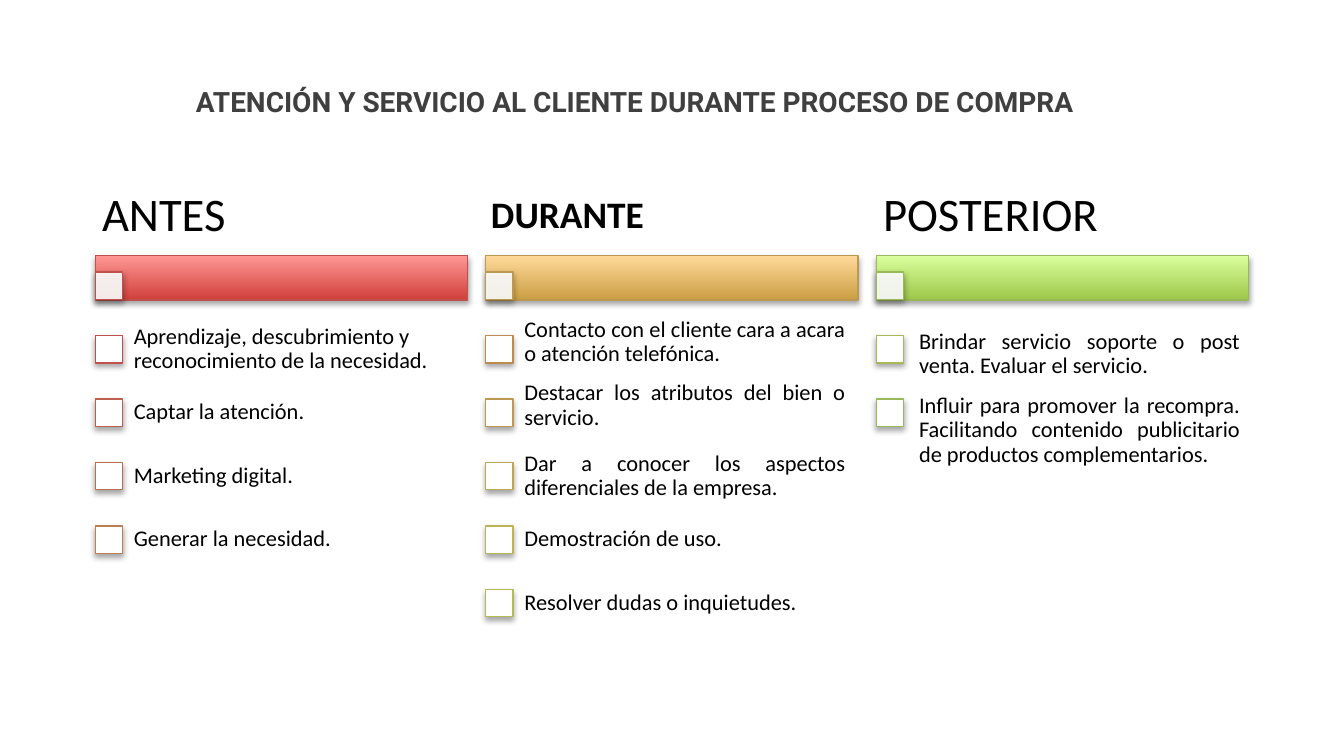
from dataclasses import dataclass

from lxml import etree
from pptx import Presentation
from pptx.dml.color import RGBColor
from pptx.enum.shapes import MSO_SHAPE
from pptx.enum.text import MSO_ANCHOR, MSO_AUTO_SIZE, PP_ALIGN
from pptx.oxml.ns import qn
from pptx.util import Cm, Pt

RECTANGLE = MSO_SHAPE.RECTANGLE
TOP, MIDDLE = MSO_ANCHOR.TOP, MSO_ANCHOR.MIDDLE
LEFT, CENTER, JUSTIFY = PP_ALIGN.LEFT, PP_ALIGN.CENTER, PP_ALIGN.JUSTIFY


@dataclass(frozen=True)
class Theme:
    title_font: str = "Roboto"
    body_font: str = "Calibri"
    title_color: str = "3F3F3F"
    text_color: str = "000000"
    box_color: str = "FFFFFF"
    shadow_color: str = "000000"
    title_size: float = 15
    body_size: float = 12
    line_width: float = 0.75


THEME = Theme()

COLUMN_LEFT, COLUMN_PITCH, COLUMN_WIDTH = 1.8, 7.38, 7.04
HEADING_TOP, HEADING_HEIGHT = 3.35, 1.48
BAR_TOP, BAR_HEIGHT = 4.83, 0.84
BOX_SIZE, BAR_BOX_TOP, FIRST_BOX_TOP = 0.52, 5.14, 6.34
FIRST_TEXT_TOP, ROW_PITCH, TEXT_WIDTH = 6.0, 1.2, 6.53

# Each item: text, line colour of its box, vertical shift of the text in cm
COLUMNS = [
    dict(
        heading="ANTES", size=25, bold=False, inset=0.13,
        line="BF504D", dark="D03F3B", light="FF9995",
        align=LEFT, indent=0.5,
        items=[
            ("Aprendizaje, descubrimiento y reconocimiento de la necesidad.", "BF504D", 0),
            ("Captar la atención.", "BE5E4D", 0),
            ("Marketing digital.", "BD6D4F", 0),
            ("Generar la necesidad.", "BC7D50", 0),
        ],
    ),
    dict(
        heading="DURANTE", size=20, bold=True, inset=0.1,
        line="BB9952", dark="CA9E42", light="FFD99A",
        align=JUSTIFY, indent=0.5,
        items=[
            ("Contacto con el cliente cara a acara o atención telefónica.", "BC8B51", -0.13),
            ("Destacar los atributos del bien o servicio.", "BB9952", -0.13),
            ("Dar a conocer los aspectos diferenciales de la empresa.", "BBA754", 0),
            ("Demostración de uso.", "BBB454", 0),
            ("Resolver dudas o inquietudes.", "B4BA55", 0),
        ],
    ),
    dict(
        heading="POSTERIOR", size=25, bold=False, inset=0.13,
        line="99B958", dark="9DC749", light="D9FF9D",
        align=JUSTIFY, indent=0.58,
        items=[
            ("Brindar servicio soporte o post venta. Evaluar el servicio.", "A7B957", 0.1),
            ("Influir para promover la recompra. Facilitando contenido publicitario "
             "de productos complementarios.", "99B958", 0.34),
        ],
    ),
]

presentation = Presentation()
presentation.slide_width, presentation.slide_height = Cm(25.4), Cm(14.29)
slide = presentation.slides.add_slide(presentation.slide_layouts[6])


def add_rectangle(left, top, width, height, line_color):
    """Add a white, outlined rectangle with a soft shadow below it."""
    shape = slide.shapes.add_shape(RECTANGLE, Cm(left), Cm(top), Cm(width), Cm(height))
    shape.fill.solid()
    shape.fill.fore_color.rgb = RGBColor.from_string(THEME.box_color)
    shape.line.color.rgb = RGBColor.from_string(line_color)
    shape.line.width = Pt(THEME.line_width)
    shape.shadow.inherit = False
    effects = shape._element.spPr.find(qn("a:effectLst"))
    shadow = etree.SubElement(
        effects, qn("a:outerShdw"), blurRad=str(Pt(3.1)), dist=str(Pt(1.8)),
        dir="5400000", rotWithShape="0")
    color = etree.SubElement(shadow, qn("a:srgbClr"), val=THEME.shadow_color)
    etree.SubElement(color, qn("a:alpha"), val="35000")
    return shape


def add_text(text, left, top, width, height, size, insets, align=LEFT, anchor=MIDDLE,
             bold=False, font=THEME.body_font, color=THEME.text_color, spacing=0.9):
    """Add a one-paragraph text box; insets are (horizontal, vertical) in cm."""
    box = slide.shapes.add_textbox(Cm(left), Cm(top), Cm(width), Cm(height))
    frame = box.text_frame
    frame.word_wrap = True
    frame.vertical_anchor = anchor
    frame.margin_left = frame.margin_right = Cm(insets[0])
    frame.margin_top = frame.margin_bottom = Cm(insets[1])
    paragraph = frame.paragraphs[0]
    paragraph.alignment = align
    paragraph.line_spacing = spacing
    run = paragraph.add_run()
    run.text = text
    run.font.name = font
    run.font.size = Pt(size)
    run.font.bold = bold
    run.font.color.rgb = RGBColor.from_string(color)
    return frame


for index, column in enumerate(COLUMNS):
    left = COLUMN_LEFT + index * COLUMN_PITCH

    bar = add_rectangle(left, BAR_TOP, COLUMN_WIDTH, BAR_HEIGHT, column["line"])
    bar.fill.gradient()
    bar.fill.gradient_angle = 90
    for stop, shade in zip(bar.fill.gradient_stops, ("dark", "light")):
        stop.color.rgb = RGBColor.from_string(column[shade])

    bar_box = add_rectangle(left, BAR_BOX_TOP, BOX_SIZE, BOX_SIZE, column["line"])
    box_color = bar_box._element.spPr.find(qn("a:solidFill")).find(qn("a:srgbClr"))
    etree.SubElement(box_color, qn("a:alpha"), val="90000")

    add_text(column["heading"], left, HEADING_TOP, COLUMN_WIDTH, HEADING_HEIGHT,
             column["size"], (column["inset"], 0.08), bold=column["bold"])

    for row, (text, line_color, shift) in enumerate(column["items"]):
        offset = row * ROW_PITCH
        add_rectangle(left, FIRST_BOX_TOP + offset, BOX_SIZE, BOX_SIZE, line_color)
        add_text(text, left + column["indent"], FIRST_TEXT_TOP + offset + shift,
                 TEXT_WIDTH, ROW_PITCH, THEME.body_size, (0.23, 0.23), column["align"])

title = add_text("ATENCIÓN Y SERVICIO AL CLIENTE DURANTE PROCESO DE COMPRA",
                 2.69, 1.47, 18.62, 0.89, THEME.title_size, (0.25, 0.13), CENTER, TOP,
                 True, THEME.title_font, THEME.title_color, 1.0)
title.auto_size = MSO_AUTO_SIZE.SHAPE_TO_FIT_TEXT

presentation.save("out.pptx")
